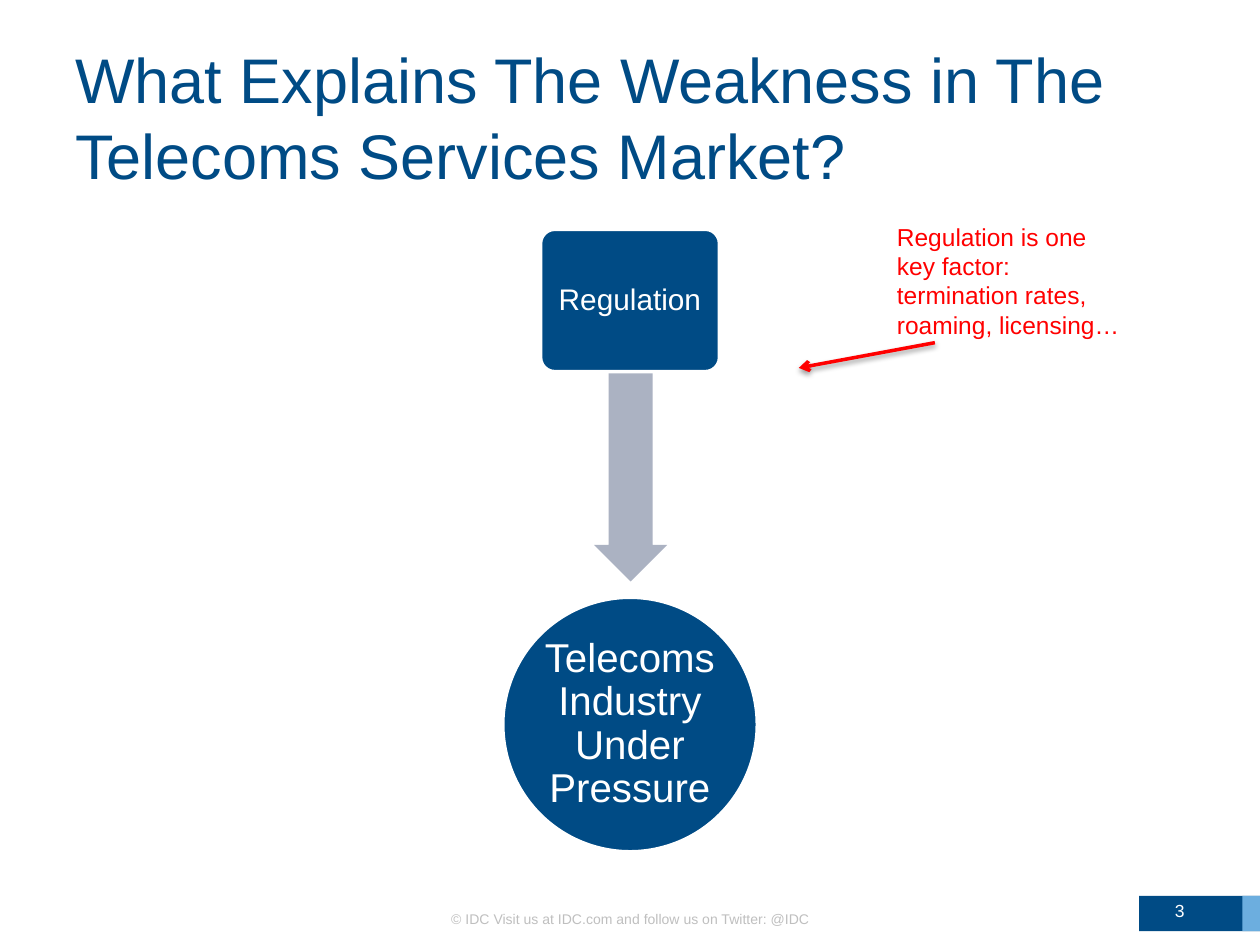
from lxml import etree
from pptx import Presentation
from pptx.dml.color import RGBColor
from pptx.enum.shapes import MSO_CONNECTOR, MSO_SHAPE
from pptx.enum.text import MSO_ANCHOR, PP_ALIGN
from pptx.oxml import parse_xml
from pptx.oxml.ns import nsdecls, qn
from pptx.util import Inches, Pt

RECTANGLE, ROUNDED = MSO_SHAPE.RECTANGLE, MSO_SHAPE.ROUNDED_RECTANGLE
OVAL, LEFT_ARROW = MSO_SHAPE.OVAL, MSO_SHAPE.LEFT_ARROW
STRAIGHT = MSO_CONNECTOR.STRAIGHT
TOP, MIDDLE = MSO_ANCHOR.TOP, MSO_ANCHOR.MIDDLE
LEFT, CENTER, RIGHT = PP_ALIGN.LEFT, PP_ALIGN.CENTER, PP_ALIGN.RIGHT

COLORS = {
    "navy": "004B85",
    "sky": "6CAEDF",
    "steel": "ABB2C2",
    "footer": "BFBFBF",
    "note": "FF0000",
    "white": "FFFFFF",
}
MARGINS = ("margin_left", "margin_top", "margin_right", "margin_bottom")


def rgb(name):
    """Return the named palette colour."""
    return RGBColor.from_string(COLORS[name])


def set_format(target, values):
    """Set each attribute of a target from a dict of values."""
    for name, value in values.items():
        setattr(target, name, value)


def write_text(shape, text, size, color, align=LEFT, anchor=MIDDLE, inset=None, spacing=None):
    """Write one formatted paragraph into a shape."""
    frame = shape.text_frame
    set_format(frame, {"word_wrap": True, "vertical_anchor": anchor})
    if inset is not None:
        set_format(frame, dict.fromkeys(MARGINS, Inches(inset)))
    paragraph = frame.paragraphs[0]
    set_format(paragraph, {"alignment": align, "line_spacing": spacing})
    run = paragraph.add_run()
    run.text = text
    set_format(run.font, {"name": "Arial", "size": Pt(size)})
    run.font.color.rgb = rgb(color)


def add_label(slide, box, text, size, color, **layout):
    """Add a text box at left, top, width, height."""
    label = slide.shapes.add_textbox(*map(Inches, box))
    write_text(label, text, size, color, **layout)


def add_block(slide, kind, box, fill, outline=None, adjustments=()):
    """Add a filled preset shape with an optional outline."""
    block = slide.shapes.add_shape(kind, *map(Inches, box))
    block.shadow.inherit = False
    block.fill.solid()
    block.fill.fore_color.rgb = rgb(fill)
    if outline:
        block.line.color.rgb = rgb(outline)
        block.line.width = Pt(2)
    else:
        block.line.fill.background()
    for index, value in enumerate(adjustments):
        block.adjustments[index] = value
    return block


def add_pointer(slide, start, end, color):
    """Add an arrow with a soft shadow below it."""
    pointer = slide.shapes.add_connector(STRAIGHT, *map(Inches, start + end))
    pointer.line.color.rgb = rgb(color)
    pointer.line.width = Pt(2)
    etree.SubElement(pointer.line._ln, qn("a:tailEnd"), type="arrow")
    pointer._element.spPr.append(parse_xml(
        f'<a:effectLst {nsdecls("a")}>'
        f'<a:outerShdw blurRad="{Pt(3.1)}" dist="{Pt(1.6)}" dir="5400000" rotWithShape="0">'
        '<a:srgbClr val="000000"><a:alpha val="38000"/></a:srgbClr>'
        '</a:outerShdw></a:effectLst>'))


def add_footer(slide):
    """Add the copyright line and the page number on its band."""
    add_block(slide, RECTANGLE, (9.04, 7.11, 0.96, 0.28), "navy")
    add_block(slide, RECTANGLE, (9.86, 7.11, 0.14, 0.28), "sky")
    add_label(slide, (2.58, 7.09, 4.85, 0.4),
              "© IDC Visit us at IDC.com and follow us on Twitter: @IDC",
              8, "footer", align=CENTER)
    add_label(slide, (7.17, 7.03, 2.33, 0.4), "3", 10, "white", align=RIGHT)


def add_pressure_diagram(slide):
    """Add the regulation cause pointing down to the industry under pressure."""
    industry = add_block(slide, OVAL, (3.99, 4.74, 2.02, 2.02), "navy", "white")
    write_text(industry, "Telecoms Industry Under Pressure", 23, "white",
               align=CENTER, inset=0.02, spacing=0.9)
    effect = add_block(slide, LEFT_ARROW, (3.89, 3.21, 2.23, 0.58), "steel",
                       adjustments=(0.6, 0.5))
    effect.rotation = 270
    cause = add_block(slide, ROUNDED, (4.29, 1.82, 1.42, 1.13), "navy", "white", (0.1,))
    write_text(cause, "Regulation", 17, "white", align=CENTER, inset=0.04, spacing=0.9)


def main():
    """Build and save the slide."""
    deck = Presentation()
    set_format(deck, {"slide_width": Inches(10), "slide_height": Inches(7.5)})
    slide = deck.slides.add_slide(deck.slide_layouts[6])
    add_footer(slide)
    add_pressure_diagram(slide)
    add_label(slide, (0.5, 0.3, 9, 1.25),
              "What Explains The Weakness in The Telecoms Services Market?", 36, "navy")
    add_label(slide, (7.02, 1.71, 2.06, 1.04),
              "Regulation is one key factor: termination rates, roaming, licensing…",
              14, "note", anchor=TOP)
    add_pointer(slide, (7.42, 2.72), (6.34, 2.92), "note")
    deck.save("out.pptx")


if __name__ == "__main__":
    main()
